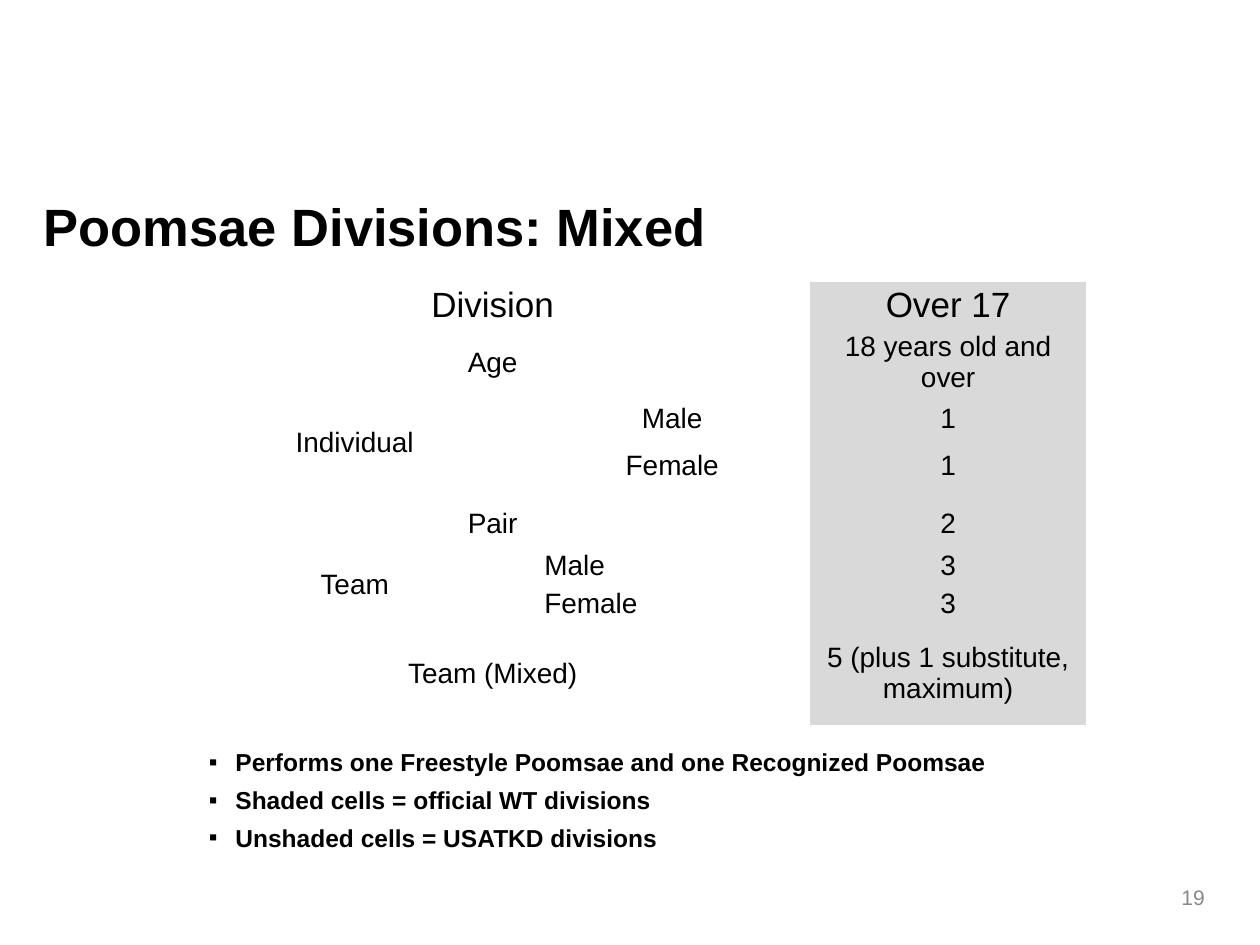
import pptx
import pptx.util
import pptx.dml.color
import pptx.enum.text
from dataclasses import dataclass
from lxml import etree
from pptx.oxml.ns import qn

Inches = pptx.util.Inches
Pt = pptx.util.Pt
Align = pptx.enum.text.PP_ALIGN
Anchor = pptx.enum.text.MSO_ANCHOR
BLACK, GREY, SHADE = "000000", "898989", "D9D9D9"
PLAIN = "{2D5ABB26-0587-4C30-8999-92F81FD0307C}"


@dataclass
class Row:
    high: float
    group: str = ""
    sex: str = ""
    count: str = ""
    size: float = 16
    down: int = 1
    across: int = 2
    side: Align = Align.CENTER


@dataclass
class Box:
    left: float
    top: float
    width: float
    height: float
    lines: list[str]
    size: float
    bold: bool = True
    color: str = BLACK
    side: Align = Align.LEFT
    anchor: Anchor = Anchor.MIDDLE
    pad: float = 0.05
    mark: str = ""


def paint(target, color: str) -> None:
    target.rgb = pptx.dml.color.RGBColor.from_string(color)


def style(run, size: float, bold: bool = False, color: str = BLACK) -> None:
    font = run.font
    font.name, font.size, font.bold = "Arial", Pt(size), bold
    paint(font.color, color)


def bullet(para, mark: str) -> None:
    props = para._p.get_or_add_pPr()
    props.set("marL", str(Inches(0.38)))
    props.set("indent", str(Inches(-0.21)))
    etree.SubElement(props, qn("a:buFont")).set("typeface", "Arial")
    etree.SubElement(props, qn("a:buChar")).set("char", mark)


def write(slide, box: Box) -> None:
    area = [Inches(n) for n in (box.left, box.top, box.width, box.height)]
    frame = slide.shapes.add_textbox(*area).text_frame
    frame.word_wrap = True
    frame.vertical_anchor = box.anchor
    frame.margin_top = frame.margin_bottom = Inches(box.pad)
    frame.margin_left = frame.margin_right = Inches(0.1)
    frame.text = "\n".join(box.lines)
    for i, para in enumerate(frame.paragraphs):
        para.alignment = box.side
        if i:
            para.space_before = Pt(4.8)
        if box.mark:
            bullet(para, box.mark)
        style(para.runs[0], box.size, box.bold, box.color)


def fill(cell, text: str, size: float, side: Align) -> None:
    cell.vertical_anchor = Anchor.MIDDLE
    cell.margin_left = cell.margin_right = Inches(0.08)
    cell.margin_top = cell.margin_bottom = 0
    cell.text_frame.text = text
    para = cell.text_frame.paragraphs[0]
    para.alignment = side
    for run in para.runs:
        style(run, size)
    if not text:
        end = etree.SubElement(para._p, qn("a:endParaRPr"))
        end.set("sz", str(int(size * 100)))


def grid(slide, rows: list[Row], cols: list[float]) -> None:
    frame = slide.shapes.add_table(
        len(rows), len(cols), Inches(1.39), Inches(2.24),
        Inches(sum(cols)), Inches(sum(r.high for r in rows)))
    table = frame.table
    table.first_row = table.horz_banding = False
    table._tbl.tblPr.find(qn("a:tableStyleId")).text = PLAIN
    for i, wide in enumerate(cols):
        table.columns[i].width = Inches(wide)
    for i, row in enumerate(rows):
        table.rows[i].height = Inches(row.high)
        sides = (Align.CENTER, row.side, Align.CENTER)
        for j, text in enumerate((row.group, row.sex, row.count)):
            cell = table.cell(i, j)
            fill(cell, text, row.size, sides[j])
            if j == 2:
                cell.fill.solid()
                paint(cell.fill.fore_color, SHADE)
            else:
                cell.fill.background()
    for i, row in enumerate(rows):
        if row.down * row.across > 1:
            last = table.cell(i + row.down - 1, row.across - 1)
            table.cell(i, 0).merge(last)


def main() -> None:
    deck = pptx.Presentation()
    deck.slide_width, deck.slide_height = Inches(10), Inches(7.5)
    slide = deck.slides.add_slide(deck.slide_layouts[6])
    notes = [
        "Performs one Freestyle Poomsae and one Recognized Poomsae",
        "Shaded cells = official WT divisions",
        "Unshaded cells = USATKD divisions",
    ]
    boxes = [
        Box(0.25, 1.33, 9.5, 0.92, ["Poomsae Divisions: Mixed"], 30),
        Box(7.33, 6.92, 2.33, 0.4, ["19"], 12, False, GREY, Align.RIGHT),
        Box(1.39, 5.83, 7.25, 1, notes, 14, anchor=Anchor.TOP,
            pad=0.1, mark="▪"),
    ]
    for box in boxes:
        write(slide, box)
    rows = [
        Row(0.37, "Division", count="Over 17", size=20),
        Row(0.53, "Age", count="18 years old and over"),
        Row(0.37, "Individual", "Male", "1", down=2, across=1),
        Row(0.37, "", "Female", "1", across=1),
        Row(0.09, size=4),
        Row(0.37, "Pair", count="2"),
        Row(0.3, "Team", "Male", "3", down=2, across=1, side=Align.LEFT),
        Row(0.3, "", "Female", "3", across=1, side=Align.LEFT),
        Row(0.81, "Team (Mixed)", count="5 (plus 1 substitute, maximum)"),
    ]
    grid(slide, rows, [2.85, 2.19, 2.19])
    deck.save("out.pptx")


if __name__ == "__main__":
    main()
